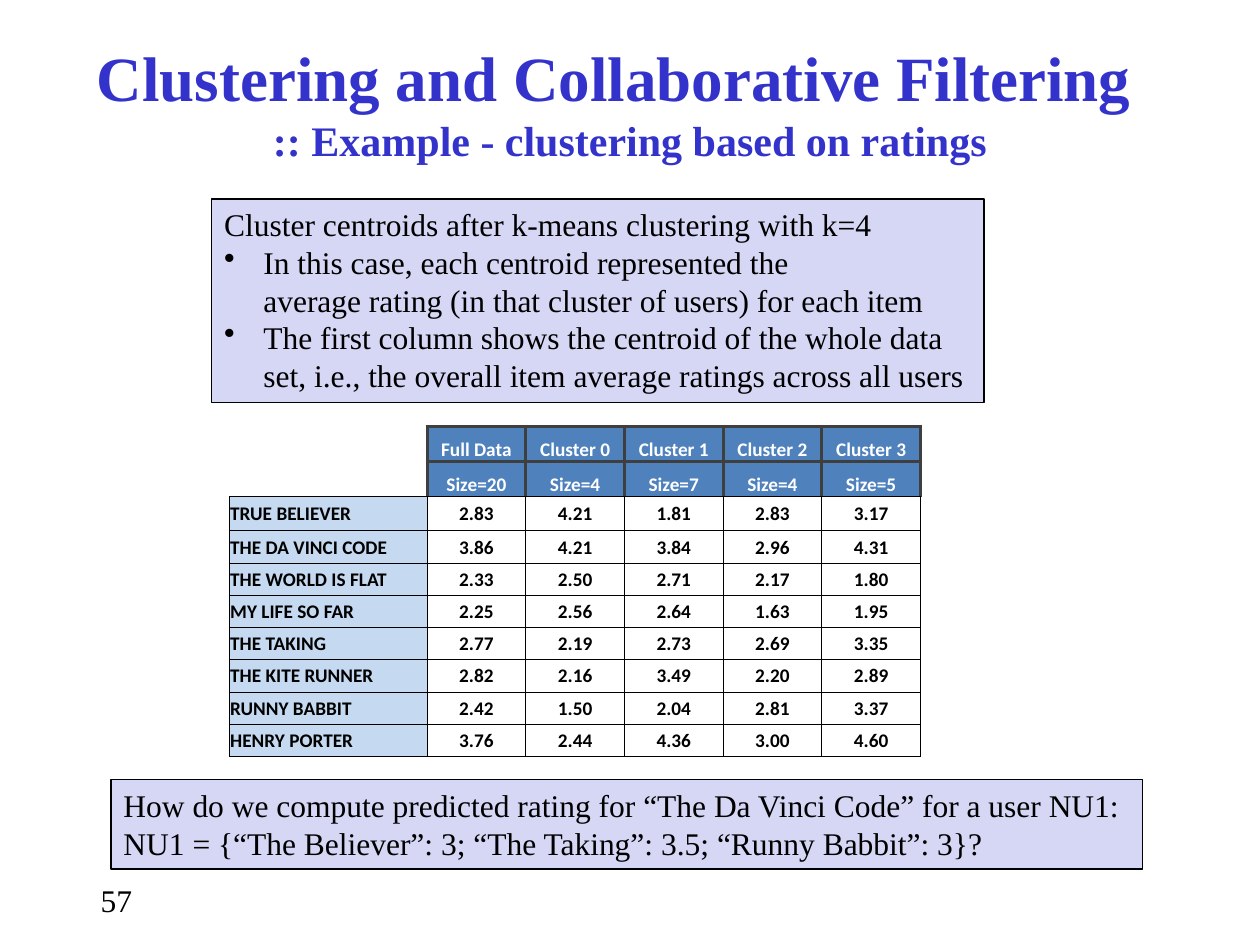
from lxml.etree import SubElement
from pptx import Presentation
from pptx.dml.color import RGBColor
from pptx.enum.shapes import MSO_SHAPE
from pptx.enum.text import MSO_ANCHOR, PP_ALIGN
from pptx.oxml import parse_xml
from pptx.oxml.ns import nsdecls, qn
from pptx.util import Cm, Pt

SERIF, SANS = "Times New Roman", "Calibri"
BLACK, BLUE, LILAC = "000000", "3333CC", "D6D6F5"
HEAD_FILL, HEAD_LINE, ITEM_FILL = "4F81BD", "3F3F3F", "C5D9F1"

HEADER = [
    ["", "Full Data", "Cluster 0", "Cluster 1", "Cluster 2", "Cluster 3"],
    ["", "Size=20", "Size=4", "Size=7", "Size=4", "Size=5"],
]
RATINGS = [
    ["TRUE BELIEVER", "2.83", "4.21", "1.81", "2.83", "3.17"],
    ["THE DA VINCI CODE", "3.86", "4.21", "3.84", "2.96", "4.31"],
    ["THE WORLD IS FLAT", "2.33", "2.50", "2.71", "2.17", "1.80"],
    ["MY LIFE SO FAR", "2.25", "2.56", "2.64", "1.63", "1.95"],
    ["THE TAKING", "2.77", "2.19", "2.73", "2.69", "3.35"],
    ["THE KITE RUNNER", "2.82", "2.16", "3.49", "2.20", "2.89"],
    ["RUNNY BABBIT", "2.42", "1.50", "2.04", "2.81", "3.37"],
    ["HENRY PORTER", "3.76", "2.44", "4.36", "3.00", "4.60"],
]


def color(value):
    return RGBColor.from_string(value)


def write(para, text, size, font=SERIF, ink=BLACK, bold=False, align=PP_ALIGN.LEFT):
    para.text = text
    para.alignment = align
    para.font.name, para.font.size, para.font.bold = font, Pt(size), bold
    para.font.color.rgb = color(ink)


def indent(para, left, first=0, bullet=None):
    properties = para._p.get_or_add_pPr()
    properties.set("marL", str(Cm(left)))
    properties.set("indent", str(Cm(first)))
    if bullet:
        properties.insert(0, parse_xml(f'<a:buChar {nsdecls("a")} char="{bullet}"/>'))


def add_text_area(page, left, top, width, height):
    box = page.shapes.add_textbox(Cm(left), Cm(top), Cm(width), Cm(height))
    box.text_frame.word_wrap = True
    return box.text_frame


def add_title(page, left, top, width, height):
    frame = add_text_area(page, left, top, width, height)
    frame.vertical_anchor = MSO_ANCHOR.MIDDLE
    write(frame.paragraphs[0], "Clustering and Collaborative Filtering",
          36, ink=BLUE, bold=True, align=PP_ALIGN.CENTER)
    subtitle = frame.add_paragraph()
    write(subtitle, ":: Example - clustering based on ratings",
          24, ink=BLUE, bold=True, align=PP_ALIGN.CENTER)
    indent(subtitle, 0.64)


def add_note(page, left, top, width, height, lead, bullets=()):
    box = page.shapes.add_shape(MSO_SHAPE.RECTANGLE, Cm(left), Cm(top), Cm(width), Cm(height))
    box.shadow.inherit = False
    box.fill.solid()
    box.fill.fore_color.rgb = color(LILAC)
    box.line.color.rgb = color(BLACK)
    box.line.width = Pt(0.75)
    frame = box.text_frame
    frame.word_wrap = True
    frame.vertical_anchor = MSO_ANCHOR.TOP
    write(frame.paragraphs[0], lead, 18)
    for text in bullets:
        para = frame.add_paragraph()
        write(para, text, 18)
        indent(para, 0.79, -0.79, "•")


def set_borders(cell, borders):
    """Draw the given sides; borders maps L, R, T, B to (colour, points)."""
    properties = cell._tc.get_or_add_tcPr()
    sides = [side for side in "LRTB" if side in borders]
    for position, side in enumerate(sides):
        ink, points = borders[side]
        line = parse_xml(f'<a:ln{side} {nsdecls("a")} w="{Pt(points)}"/>')
        fill = SubElement(line, qn("a:solidFill"))
        SubElement(fill, qn("a:srgbClr"), val=ink)
        properties.insert(position, line)


def fill_cell(cell, text, row, column):
    in_header, is_label = row < len(HEADER), column == 0
    thick, thin = (HEAD_LINE, 2), (BLACK, 0.5)
    cell.margin_left = cell.margin_right = cell.margin_top = Cm(0.02)
    cell.margin_bottom = 0
    cell.vertical_anchor = MSO_ANCHOR.BOTTOM if in_header else MSO_ANCHOR.MIDDLE
    write(cell.text_frame.paragraphs[0], text, 11, SANS,
          "FFFFFF" if in_header else BLACK, True,
          PP_ALIGN.LEFT if is_label else PP_ALIGN.CENTER)

    # The corner cells stay empty and open
    if in_header == is_label:
        cell.fill.background()
    else:
        cell.fill.solid()
        cell.fill.fore_color.rgb = color(HEAD_FILL if in_header else ITEM_FILL)
    if not in_header:
        borders = dict.fromkeys("LRTB", thin)
        if row == len(HEADER) and is_label:
            borders["T"] = thin
    elif is_label:
        borders = {"R": thick}
    else:
        borders = dict.fromkeys("LRT", thick)
        borders["B"] = thick if row == 0 else thin
    if in_header and is_label and row == len(HEADER) - 1:
        borders["B"] = thin
    set_borders(cell, borders)


def add_ratings_table(page, left, top, width, height):
    rows = HEADER + RATINGS
    label_width = 3.99
    row_heights = [0.71, 0.71, 0.69] + [0.65] * (len(RATINGS) - 1)
    frame = page.shapes.add_table(len(rows), len(rows[0]),
                                  Cm(left), Cm(top), Cm(width), Cm(height))
    table = frame.table
    table.first_row = table.horz_banding = False
    for index, column in enumerate(table.columns):
        rest = (width - label_width) / (len(rows[0]) - 1)
        column.width = Cm(rest if index else label_width)
    for row, (texts, row_height) in enumerate(zip(rows, row_heights)):
        table.rows[row].height = Cm(row_height)
        for column, text in enumerate(texts):
            fill_cell(table.cell(row, column), text, row, column)


def add_page_number(page, left, top, width, height):
    frame = add_text_area(page, left, top, width, height)
    frame.vertical_anchor = MSO_ANCHOR.MIDDLE
    write(frame.paragraphs[0], "57", 18)


def main():
    deck = Presentation()
    deck.slide_width, deck.slide_height = Cm(25.4), Cm(19.05)
    page = deck.slides.add_slide(deck.slide_layouts[6])

    add_title(page, 0.76, 0.43, 23.24, 3.23)
    # Explanation of the centroids
    add_note(page, 4.27, 4.01, 15.57, 4.11,
             "Cluster centroids after k-means clustering with k=4",
             ["In this case, each centroid represented the\n"
              "average rating (in that cluster of users) for each item",
              "The first column shows the centroid of the whole data\n"
              "set, i.e., the overall item average ratings across all users"])
    add_ratings_table(page, 4.62, 8.59, 13.94, 6.66)
    # Closing question
    add_note(page, 2.24, 15.72, 20.8, 1.8,
             "How do we compute predicted rating for “The Da Vinci Code” for a user NU1:\n"
             "NU1 = {“The Believer”: 3; “The Taking”: 3.5; “Runny Babbit”: 3}?")
    add_page_number(page, 1.78, 17.6, 9.53, 1.1)

    deck.save("out.pptx")


if __name__ == "__main__":
    main()
